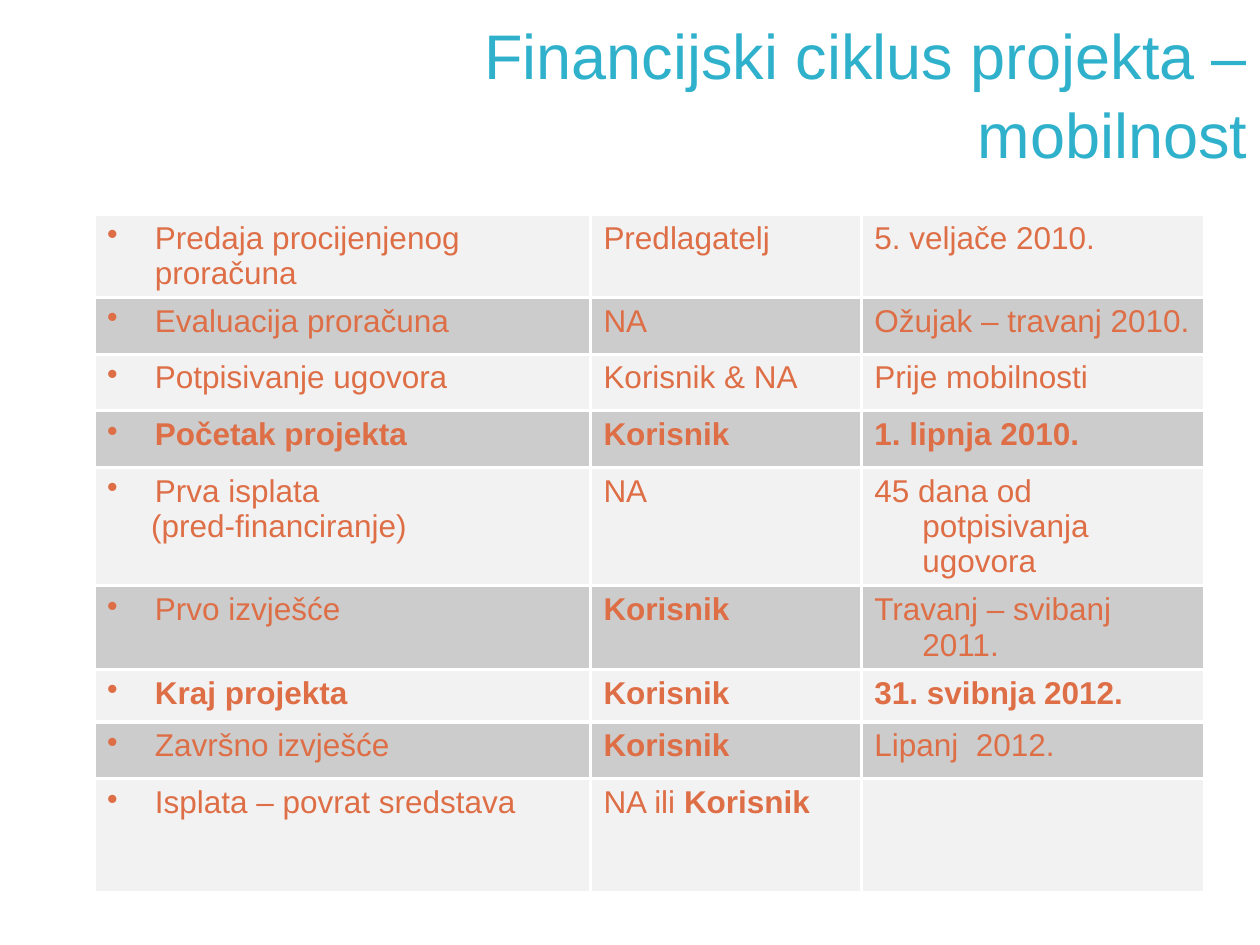
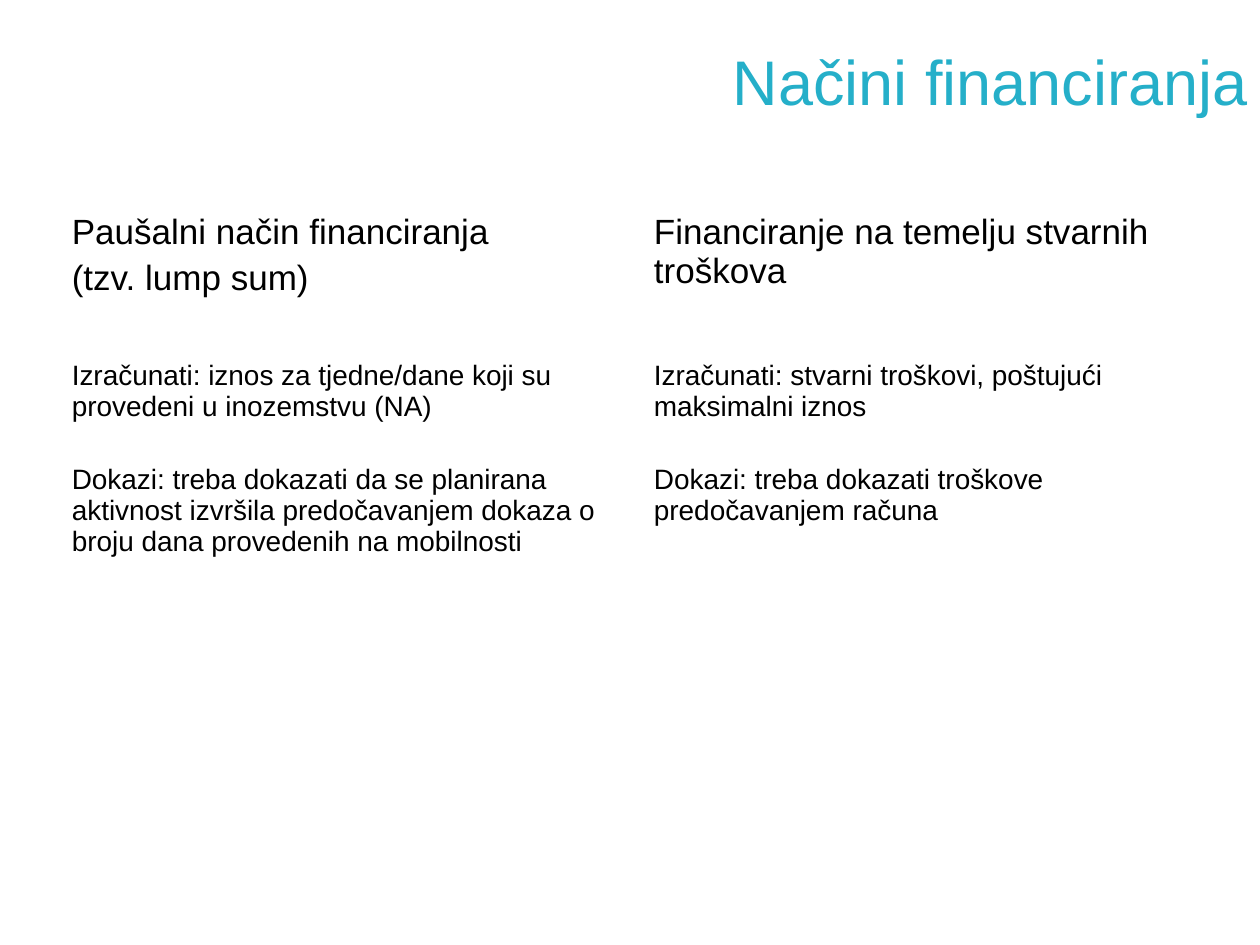
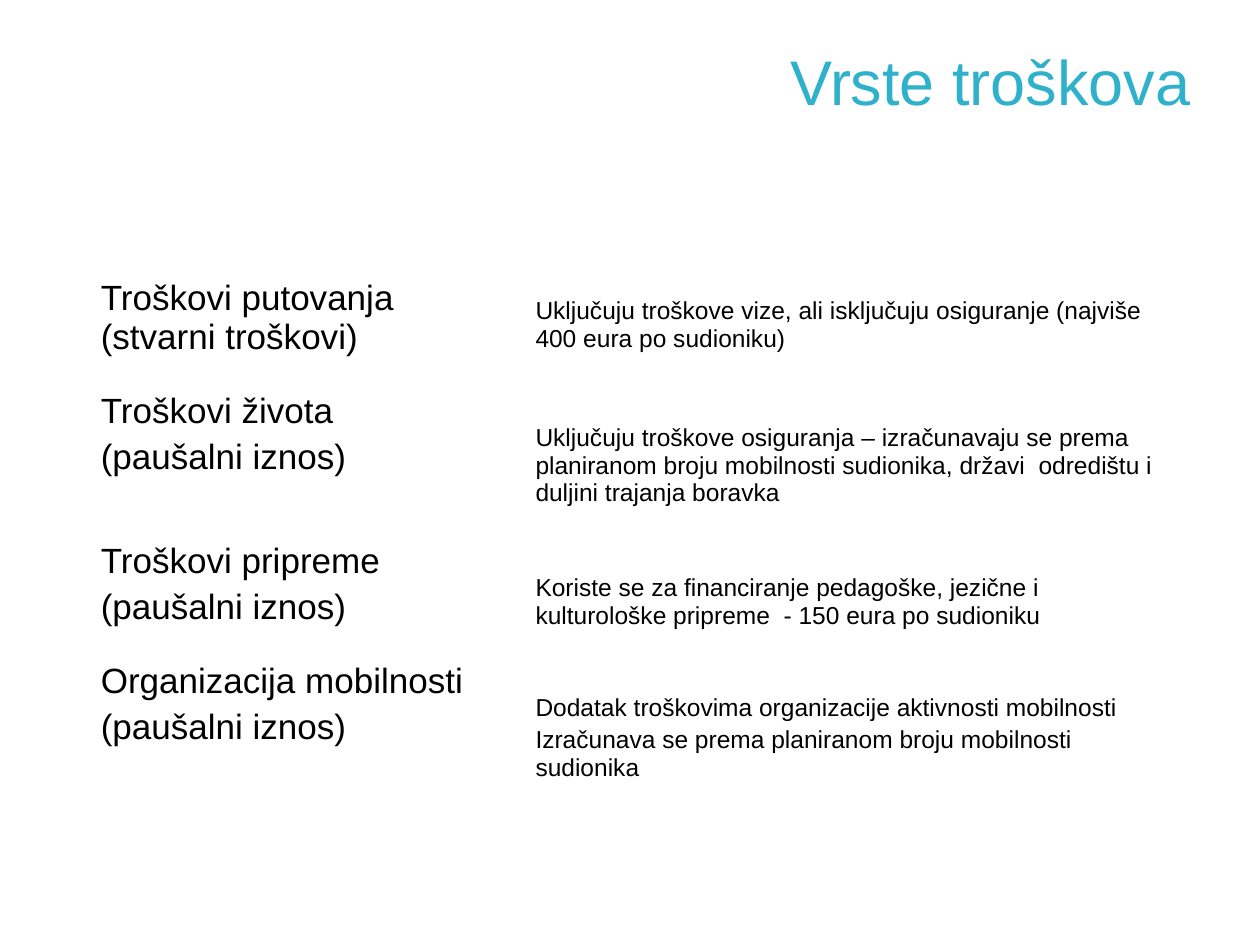
from dataclasses import dataclass
from typing import Optional

from pptx import Presentation
from pptx.dml.color import RGBColor
from pptx.enum.text import MSO_ANCHOR, MSO_AUTO_SIZE, PP_ALIGN
from pptx.oxml.ns import qn
from pptx.oxml.xmlchemy import OxmlElement as new_element
from pptx.util import Inches, Pt

FONT = "Arial"
COLORS = {
    "title": "2FB1CC",
    "title_alt": "25AFC9",
    "cycle": "DE6E46",
    "text": "000000",
    "light": "F2F2F2",
    "dark": "CCCCCC",
    "border": "FFFFFF",
}
TITLE_SIZE = 36
BULLET_INDENT = 0.38
CELL_MARGIN = 0.05


@dataclass(frozen=True)
class Line:
    """One paragraph; text between asterisks is bold."""
    text: str
    bullet: bool = False
    indent: float = BULLET_INDENT
    hanging: bool = True
    before: float = 0


@dataclass(frozen=True)
class Cell:
    lines: tuple[Line, ...]
    size: float
    color: str = "text"
    fill: Optional[str] = None
    margin_top: float = CELL_MARGIN


@dataclass(frozen=True)
class Grid:
    left: float
    top: float
    widths: tuple[float, ...]
    heights: tuple[float, ...]


@dataclass(frozen=True)
class Title:
    text: str
    left: float
    top: float
    width: float
    height: float
    color: str = "title"


# Shared drawing functions
def rgb(name: str) -> RGBColor:
    return RGBColor.from_string(COLORS[name])


def style_font(font, size: float, color: str) -> None:
    font.name = FONT
    font.size = Pt(size)
    font.color.rgb = rgb(color)


def add_titled_page(deck, title: Title):
    page = deck.slides.add_slide(deck.slide_layouts[5])
    box = page.shapes.title
    box.left, box.top = Inches(title.left), Inches(title.top)
    box.width, box.height = Inches(title.width), Inches(title.height)
    frame = box.text_frame
    frame.text = title.text
    frame.word_wrap = True
    frame.auto_size = MSO_AUTO_SIZE.NONE
    frame.vertical_anchor = MSO_ANCHOR.MIDDLE
    para = frame.paragraphs[0]
    para.alignment = PP_ALIGN.RIGHT
    para.line_spacing = 1.05
    style_font(para.runs[0].font, TITLE_SIZE, title.color)
    return page


def set_indent(para, line: Line) -> None:
    properties = para._p.get_or_add_pPr()
    properties.set("marL", str(Inches(line.indent)))
    properties.set("indent", str(-Inches(line.indent) if line.hanging else 0))
    if line.bullet:
        bullet = new_element("a:buChar")
        bullet.set("char", "•")
        properties.append(bullet)


def add_borders(table_cell) -> None:
    properties = table_cell._tc.get_or_add_tcPr()
    for side in ("L", "R", "T", "B"):
        border = new_element(f"a:ln{side}")
        border.set("w", str(Pt(2)))
        fill = new_element("a:solidFill")
        color = new_element("a:srgbClr")
        color.set("val", COLORS["border"])
        fill.append(color)
        border.append(fill)
        properties.append(border)


def fill_cell(table_cell, cell: Cell) -> None:
    table_cell.margin_top = Inches(cell.margin_top)
    if cell.fill:
        add_borders(table_cell)
        table_cell.fill.solid()
        table_cell.fill.fore_color.rgb = rgb(cell.fill)
    else:
        table_cell.fill.background()
    frame = table_cell.text_frame
    for index, line in enumerate(cell.lines):
        para = frame.add_paragraph() if index else frame.paragraphs[0]
        if index:
            para.space_before = Pt(line.before)
        set_indent(para, line)
        for part, text in enumerate(line.text.split("*")):
            if text:
                span = para.add_run()
                span.text = text
                style_font(span.font, cell.size, cell.color)
                span.font.bold = part % 2 == 1


def add_grid(page, grid: Grid, rows: list[list[Cell]]) -> None:
    table = page.shapes.add_table(
        len(grid.heights), len(grid.widths), Inches(grid.left), Inches(grid.top),
        Inches(sum(grid.widths)), Inches(sum(grid.heights))).table
    table.first_row = table.horz_banding = False
    for column, width in zip(table.columns, grid.widths):
        column.width = Inches(width)
    for table_row, height, cells in zip(table.rows, grid.heights, rows):
        table_row.height = Inches(height)
        for table_cell, cell in zip(table_row.cells, cells):
            fill_cell(table_cell, cell)


def plain_cell(size: float, *texts: str, before: Optional[float] = None,
               margin_top: float = CELL_MARGIN) -> Cell:
    gap = size / 5 if before is None else before
    lines = tuple(Line(text, indent=0, hanging=False, before=gap) for text in texts)
    return Cell(lines, size, margin_top=margin_top)


# Slide 1: financial cycle
CYCLE_TITLE = Title("Financijski ciklus projekta – mobilnost", 2.7, -0.23, 7.3, 1.92)
CYCLE_GRID = Grid(0.75, 1.7, (3.94, 2.15, 2.72), (0.45,) * 6 + (0.42, 0.45, 0.9))
CYCLE_STEPS = [
    ("Predaja procijenjenog proračuna", "Predlagatelj", "5. veljače 2010."),
    ("Evaluacija proračuna", "NA", "Ožujak – travanj 2010."),
    ("Potpisivanje ugovora", "Korisnik & NA", "Prije mobilnosti"),
    ("*Početak projekta*", "*Korisnik*", "*1. lipnja 2010.*"),
    ("Prva isplata\n(pred-financiranje)", "NA", "45 dana od potpisivanja ugovora"),
    ("Prvo izvješće", "*Korisnik*", "Travanj – svibanj 2011."),
    ("*Kraj projekta*", "*Korisnik*", "*31. svibnja 2012.*"),
    ("Završno izvješće", "*Korisnik*", "Lipanj  2012."),
    ("Isplata – povrat sredstava", "NA ili *Korisnik*", ""),
]


def cycle_row(index: int, step: tuple[str, str, str]) -> list[Cell]:
    fill = "dark" if index % 2 else "light"
    name, *details = step
    first, *rest = name.split("\n")
    lines = [(Line(first, bullet=True),
              *(Line(text, indent=0.35, hanging=False) for text in rest))]
    lines += [(Line(text),) for text in details]
    return [Cell(cell_lines, 18, "cycle", fill) for cell_lines in lines]


def build_cycle(deck) -> None:
    page = add_titled_page(deck, CYCLE_TITLE)
    add_grid(page, CYCLE_GRID,
             [cycle_row(index, step) for index, step in enumerate(CYCLE_STEPS)])


# Slide 2: ways of financing
METHODS_TITLE = Title("Načini financiranja", 1.5, 0, 8.5, 1.25, "title_alt")
METHODS_GRID = Grid(0.47, 1.64, (4.62, 4.53), (1.17, 3.83))
METHOD_NAMES = [
    ("Paušalni način financiranja", "(tzv. lump sum)"),
    ("Financiranje na temelju stvarnih troškova",),
]
METHOD_RULES = [
    ("Izračunati: iznos za tjedne/dane koji su provedeni u inozemstvu (NA)",
     "Dokazi: treba dokazati da se planirana aktivnost izvršila predočavanjem "
     "dokaza o broju dana provedenih na mobilnosti"),
    ("Izračunati: stvarni troškovi, poštujući maksimalni iznos",
     "Dokazi: treba dokazati troškove predočavanjem računa"),
]


def build_methods(deck) -> None:
    page = add_titled_page(deck, METHODS_TITLE)
    add_grid(page, METHODS_GRID, [
        [plain_cell(20, *name) for name in METHOD_NAMES],
        [plain_cell(16, *rules, before=24) for rules in METHOD_RULES],
    ])


# Slide 3: kinds of costs
COSTS_TITLE = Title("Vrste troškova", 0.55, 0, 9, 1.25)
COSTS_GRID = Grid(0.7, 1.8, (3.45, 5.1), (1.26, 1.19, 0.95, 1.52))
FLAT_RATE = "(paušalni iznos)"
COST_ROWS = [
    [plain_cell(20, "Troškovi putovanja (stvarni troškovi)", margin_top=0.41),
     plain_cell(14, "Uključuju troškove vize, ali isključuju osiguranje "
                "(najviše 400 eura po sudioniku)", margin_top=0.56)],
]
FLAT_COSTS = [
    ("Troškovi života",
     "Uključuju troškove osiguranja – izračunavaju se prema planiranom broju "
     "mobilnosti sudionika, državi  odredištu i duljini trajanja boravka"),
    ("Troškovi pripreme",
     "Koriste se za financiranje pedagoške, jezične i kulturološke pripreme  "
     "- 150 eura po sudioniku"),
    ("Organizacija mobilnosti",
     "Dodatak troškovima organizacije aktivnosti mobilnosti",
     "Izračunava se prema planiranom broju mobilnosti sudionika"),
]


def build_costs(deck) -> None:
    page = add_titled_page(deck, COSTS_TITLE)
    flat_rows = [[plain_cell(20, name, FLAT_RATE), plain_cell(14, *notes, margin_top=0.31)]
                 for name, *notes in FLAT_COSTS]
    add_grid(page, COSTS_GRID, COST_ROWS + flat_rows)


def main() -> None:
    deck = Presentation()
    deck.slide_width, deck.slide_height = Inches(10), Inches(7.5)
    build_cycle(deck)
    build_methods(deck)
    build_costs(deck)
    deck.save("out.pptx")


if __name__ == "__main__":
    main()
